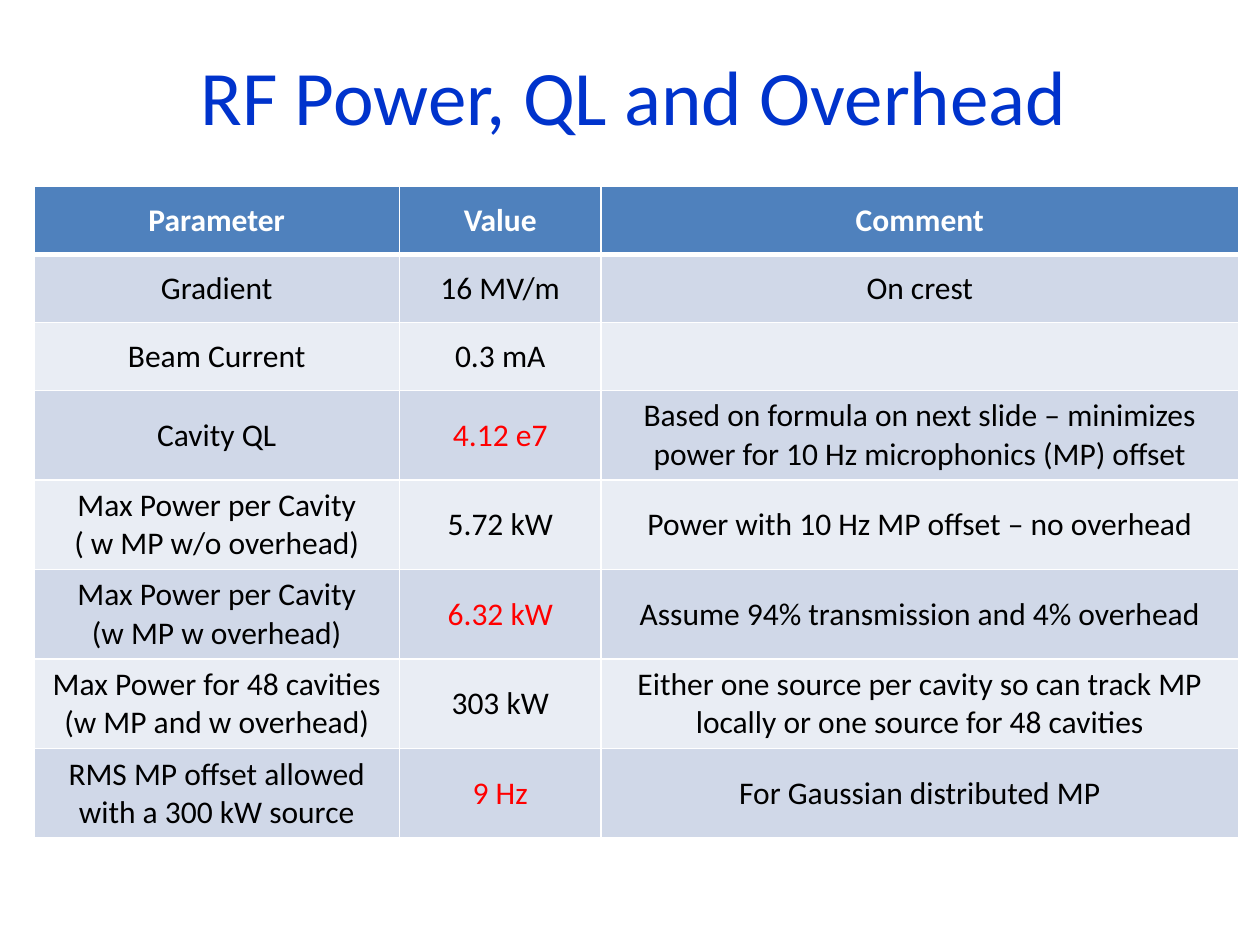
from typing import NamedTuple

from lxml import etree
from pptx import Presentation
from pptx import util as u
from pptx.dml.color import RGBColor
from pptx.enum import text
from pptx.oxml import ns

TITLE_BLUE = RGBColor(0x00, 0x33, 0xCC)
HEADER_BLUE = RGBColor(0x4F, 0x81, 0xBD)
BAND_DARK = RGBColor(0xD0, 0xD8, 0xE8)
BAND_LIGHT = RGBColor(0xE9, 0xED, 0xF4)
WHITE = RGBColor(0xFF, 0xFF, 0xFF)
BLACK = RGBColor(0x00, 0x00, 0x00)
RED = RGBColor(0xFF, 0x00, 0x00)

COLUMN_WIDTHS = (2.9, 1.6, 5.06)
ROW_HEIGHT = 0.54


class Parameter(NamedTuple):
    name: str
    value: str
    comment: str
    value_color: RGBColor = BLACK


HEADINGS = ("Parameter", "Value", "Comment")
PARAMETERS = (
    Parameter("Gradient", "16 MV/m", "On crest"),
    Parameter("Beam Current", "0.3 mA", ""),
    Parameter("Cavity QL", "4.12 e7",
              "Based on formula on next slide – minimizes power for 10 Hz "
              "microphonics (MP) offset", RED),
    Parameter("Max Power per Cavity\n( w MP w/o overhead)", "5.72 kW",
              "Power with 10 Hz MP offset – no overhead"),
    Parameter("Max Power per Cavity\n(w MP w overhead)", "6.32 kW",
              "Assume 94% transmission and 4% overhead", RED),
    Parameter("Max Power for 48 cavities\n(w MP and w overhead)", "303 kW",
              "Either one source per cavity so can track MP locally or one "
              "source for 48 cavities"),
    Parameter("RMS MP offset allowed with a 300 kW source", "9 Hz",
              "For Gaussian distributed MP", RED),
)


def write_text(frame, content: str, color: RGBColor, size: int,
               bold: bool = False) -> None:
    """Fill a text frame with centred paragraphs, one for each line."""
    frame.text = content
    font_format = {"name": "Calibri", "size": u.Pt(size), "bold": bold}
    for para in frame.paragraphs:
        para.alignment = text.PP_ALIGN.CENTER
        for span in para.runs:
            for key, value in font_format.items():
                setattr(span.font, key, value)
            span.font.color.rgb = color


def add_borders(cell, top: int = 1, bottom: int = 1) -> None:
    """Draw white cell borders with widths in points."""
    properties = cell._tc.get_or_add_tcPr()
    for side, width in {"L": 1, "R": 1, "T": top, "B": bottom}.items():
        line = etree.SubElement(properties, ns.qn(f"a:ln{side}"),
                                w=str(u.Pt(width)))
        fill = etree.SubElement(line, ns.qn("a:solidFill"))
        etree.SubElement(fill, ns.qn("a:srgbClr"), val=str(WHITE))


def style_cell(cell, content: str, fill: RGBColor, color: RGBColor,
               bold: bool = False, top: int = 1, bottom: int = 1) -> None:
    write_text(cell.text_frame, content, color, 18, bold)
    cell.vertical_anchor = text.MSO_ANCHOR.MIDDLE
    add_borders(cell, top, bottom)
    cell.fill.solid()
    cell.fill.fore_color.rgb = fill


def add_title(page) -> None:
    title = page.shapes.title
    place = {"left": 0.53, "top": 0.29, "width": 9, "height": 0.92}
    for key, value in place.items():
        setattr(title, key, u.Inches(value))
    title.text_frame.vertical_anchor = text.MSO_ANCHOR.MIDDLE
    write_text(title.text_frame, "RF Power, QL and Overhead", TITLE_BLUE, 44)


def add_parameter_table(page) -> None:
    row_count = len(PARAMETERS) + 1
    table = page.shapes.add_table(
        row_count, len(HEADINGS), u.Inches(0.27), u.Inches(1.48),
        u.Inches(sum(COLUMN_WIDTHS)), u.Inches(ROW_HEIGHT * row_count)).table
    for column, width in zip(table.columns, COLUMN_WIDTHS):
        column.width = u.Inches(width)
    for row in table.rows:
        row.height = u.Inches(ROW_HEIGHT)

    # Header row
    for column, heading in enumerate(HEADINGS):
        style_cell(table.cell(0, column), heading, HEADER_BLUE, WHITE,
                   bold=True, bottom=3)

    # Banded parameter rows
    for row, item in enumerate(PARAMETERS, start=1):
        fill = BAND_DARK if row % 2 else BAND_LIGHT
        contents = ((item.name, BLACK), (item.value, item.value_color),
                    (item.comment, BLACK))
        for column, (content, color) in enumerate(contents):
            style_cell(table.cell(row, column), content, fill, color,
                       top=3 if row == 1 else 1)


def main() -> None:
    deck = Presentation()
    deck.slide_width, deck.slide_height = u.Inches(10), u.Inches(7.5)
    page = deck.slides.add_slide(deck.slide_layouts[5])
    add_title(page)
    add_parameter_table(page)
    deck.save("out.pptx")


if __name__ == "__main__":
    main()
